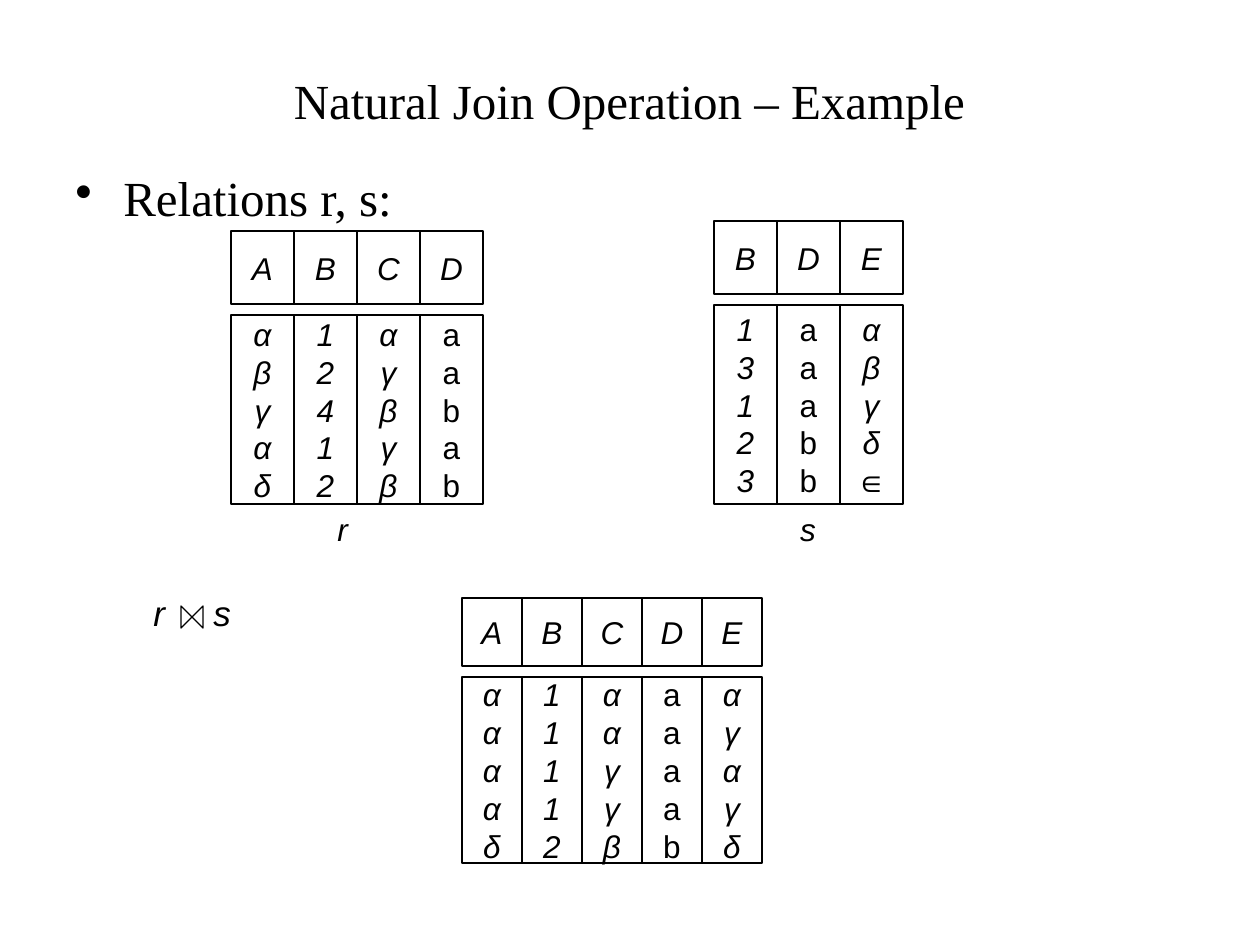
"""Build the natural join example slide."""
from lxml import etree
from pptx import Presentation
from pptx.dml.color import RGBColor
from pptx.enum.shapes import MSO_SHAPE
from pptx.enum.text import MSO_ANCHOR, PP_ALIGN
from pptx.oxml.ns import qn
from pptx.util import Emu, Pt

BLACK = RGBColor(0, 0, 0)
WHITE = RGBColor(255, 255, 255)
RECT, BOWTIE = MSO_SHAPE.RECTANGLE, MSO_SHAPE.FLOWCHART_COLLATE
CENTER, LEFT = PP_ALIGN.CENTER, PP_ALIGN.LEFT
MIDDLE, TOP = MSO_ANCHOR.MIDDLE, MSO_ANCHOR.TOP
SANS, SERIF = "Arial", "Times New Roman"


def px(*sizes):
    return [Emu(round(size * 914400 / 126)) for size in sizes]


def write(shape, lines, size=18, name=SANS, italic=True, align=CENTER, anchor=MIDDLE, wrap=False):
    frame = shape.text_frame
    frame.text = "\n".join(lines)
    frame.word_wrap = wrap
    frame.vertical_anchor = anchor
    style = {"size": Pt(size), "name": name, "italic": italic, "bold": False}
    for para in frame.paragraphs:
        para.alignment = align
        for run in para.runs:
            run.font.color.rgb = BLACK
            for key, value in style.items():
                setattr(run.font, key, value)
    return frame.paragraphs[0]


deck = Presentation()
deck.slide_width, deck.slide_height = px(1260, 945)
slide = deck.slides.add_slide(deck.slide_layouts[5])
shapes = slide.shapes

title = shapes.title
title.left, title.top, title.width, title.height = px(94, 21, 1071, 158)
write(title, ["Natural Join Operation – Example"], 28, SERIF, False, wrap=True)

intro = shapes.add_textbox(*px(63, 168, 969, 57))
para = write(intro, ["Relations r, s:"], 28, SERIF, False, LEFT, TOP, True)
para.line_spacing = 0.9
props = para._p.get_or_add_pPr()
indent = px(48)[0]
props.set("marL", str(indent))
props.set("indent", str(-indent))
etree.SubElement(props, qn("a:buChar")).set("char", "•")

tables = [
    (231, 63, 231, 73, 315, 189,
     {"A": "αβγαδ", "B": "12412", "C": "αγβγβ", "D": "aabab"}),
    (714, 63, 221, 73, 305, 199,
     {"B": "13123", "D": "aaabb", "E": "αβγδ∈"}),
    (462, 60, 598, 68, 677, 186,
     {"A": "ααααδ", "B": "11112", "C": "ααγγβ", "D": "aaaab", "E": "αγαγδ"}),
]
for left, width, top, height, low, depth, columns in tables:
    for i, (head, values) in enumerate(columns.items()):
        x = left + i * width
        for y, tall, text in ((top, height, head), (low, depth, values)):
            box = shapes.add_shape(RECT, *px(x, y, width, tall))
            box.shadow.inherit = False
            box.fill.solid()
            box.fill.fore_color.rgb = WHITE
            box.line.color.rgb = BLACK
            box.line.width = Pt(0.75)
            write(box, text, italic=text == head or head != "D")

for label, x, width in (("r", 325, 35), ("s", 787, 42)):
    write(shapes.add_textbox(*px(x, 504, width, 50)), [label])

join = shapes.add_textbox(*px(141, 585, 969, 57))
para = write(join, ["r\ts"], 20, align=LEFT, anchor=TOP, wrap=True)
tabs = etree.SubElement(para._p.get_or_add_pPr(), qn("a:tabLst"))
stop = etree.SubElement(tabs, qn("a:tab"))
stop.set("pos", str(px(60)[0]))
stop.set("algn", "l")

sign = shapes.add_shape(BOWTIE, *px(181, 606, 22, 22))
sign.rotation = 270
sign.shadow.inherit = False
sign.fill.solid()
sign.fill.fore_color.rgb = WHITE
sign.line.color.rgb = BLACK
sign.line.width = Pt(0.75)

deck.save("out.pptx")
